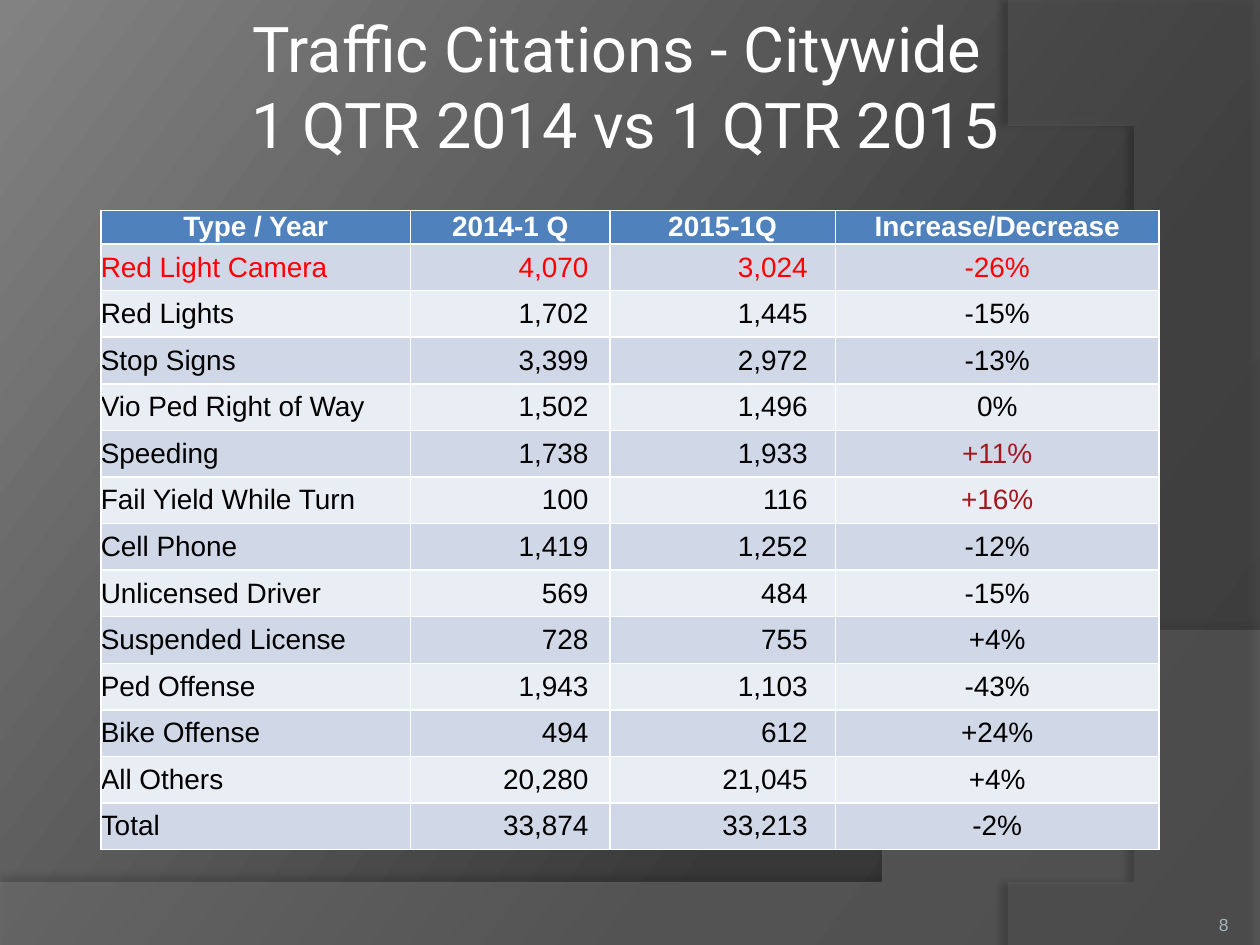
import copy
from dataclasses import dataclass

import pptx
import pptx.dml.color
import pptx.enum.text
import pptx.oxml
import pptx.oxml.ns
import pptx.util
from pptx.util import Inches, Pt

ALIGN = pptx.enum.text.PP_ALIGN
ANCHOR = pptx.enum.text.MSO_ANCHOR
qn = pptx.oxml.ns.qn
NAMESPACE = pptx.oxml.ns.nsdecls("a")

BLACK, WHITE, RED, DARK_RED = "000000", "FFFFFF", "FF0000", "A3171E"
HEADER_FILL, BAND_FILLS = "4F81BD", ("D0D8E8", "E9EDF4")
GRADIENT = ((0, "2F2F2F"), (0.3, "383838"), (1, "828282"))

Point = tuple[float, float]


@dataclass
class Swoosh:
    """Points and cubic curves; a curve is a tuple of two controls and an end."""
    start: Point
    segments: list[tuple[Point, ...]]
    fill: str
    opacity: int
    shadow_opacity: int
    shadow_distance: float
    shadow_direction: int


@dataclass
class Column:
    heading: str
    width: float
    alignment: ALIGN
    right_margin: float = 0


@dataclass
class Citation:
    kind: str
    count_2014: str
    count_2015: str
    change: str
    color: str = BLACK
    change_color: str = BLACK


SWOOSHES = [
    Swoosh((0, 7.05), [((0, 7.5),), ((10, 7.5),), ((10, 5.2),),
                       ((5.59, 7.29), (3.91, 7.19), (0, 7.05))],
           "7F7F7F", 45, 35, 3.5, 270),
    Swoosh((10, 0.02), [((10, 7.5),), ((8.21, 7.5),),
                        ((9.35, 6.19), (10.18, 3), (8, 0))],
           "5E5E5E", 40, 45, 4, 180),
]
COLUMNS = [
    Column("Type / Year", 2.46, ALIGN.LEFT),
    Column("2014-1 Q", 1.58, ALIGN.RIGHT, 0.17),
    Column("2015-1Q", 1.79, ALIGN.RIGHT, 0.22),
    Column("Increase/Decrease", 2.57, ALIGN.CENTER),
]
CITATIONS = [
    Citation("Red Light Camera", "4,070", "3,024", "-26%", RED, RED),
    Citation("Red Lights", "1,702", "1,445", "-15%"),
    Citation("Stop Signs", "3,399", "2,972", "-13%"),
    Citation("Vio Ped Right of Way", "1,502", "1,496", "0%"),
    Citation("Speeding", "1,738", "1,933", "+11%", change_color=DARK_RED),
    Citation("Fail Yield While Turn", "100", "116", "+16%", change_color=DARK_RED),
    Citation("Cell Phone", "1,419", "1,252", "-12%"),
    Citation("Unlicensed Driver", "569", "484", "-15%"),
    Citation("Suspended License", "728", "755", "+4%"),
    Citation("Ped Offense", "1,943", "1,103", "-43%"),
    Citation("Bike Offense", "494", "612", "+24%"),
    Citation("All Others", "20,280", "21,045", "+4%"),
    Citation("Total", "33,874", "33,213", "-2%"),
]


def rgb(color: str) -> pptx.dml.color.RGBColor:
    return pptx.dml.color.RGBColor.from_string(color)


def format_text(text_frame, size: float, color: str, alignment: ALIGN,
                font: str = "Arial", bold: bool = False) -> None:
    for paragraph in text_frame.paragraphs:
        paragraph.alignment = alignment
        for run in paragraph.runs:
            run.font.size = Pt(size)
            run.font.name = font
            run.font.bold = bold
            run.font.color.rgb = rgb(color)


def set_margins(target, margin: float) -> None:
    for side in ("left", "top", "right", "bottom"):
        setattr(target, f"margin_{side}", Inches(margin))


def paint_background(slide) -> None:
    fill = slide.background.fill
    fill.gradient()
    fill.gradient_angle = 143
    stop_list = next(slide.element.iter(qn("a:gsLst")))
    stop_list.append(copy.deepcopy(stop_list[-1]))
    for stop, (position, color) in zip(fill.gradient_stops, GRADIENT):
        stop.position = position
        stop.color.rgb = rgb(color)


def curve_points(start: Point, controls: tuple[Point, ...], steps: int = 40) -> list[Point]:
    """Sample a cubic curve, leaving out its start."""
    corners = (start, *controls)
    points = []
    for step in range(1, steps + 1):
        t = step / steps
        weights = ((1 - t) ** 3, 3 * t * (1 - t) ** 2, 3 * t * t * (1 - t), t ** 3)
        points.append(tuple(sum(w * corner[axis] for w, corner in zip(weights, corners))
                            for axis in (0, 1)))
    return points


def add_swoosh(slide, swoosh: Swoosh) -> None:
    points = [swoosh.start]
    for segment in swoosh.segments:
        points += curve_points(points[-1], segment) if len(segment) == 3 else segment
    builder = slide.shapes.build_freeform(*points[0], scale=Inches(1))
    builder.add_line_segments(points[1:], close=True)
    shape = builder.convert_to_shape()
    shape.fill.solid()
    shape.fill.fore_color.rgb = rgb(swoosh.fill)
    shape.line.fill.background()
    fill_color = next(shape.element.spPr.iter(qn("a:srgbClr")))
    fill_color.append(pptx.oxml.parse_xml(
        f'<a:alpha {NAMESPACE} val="{swoosh.opacity * 1000}"/>'))
    shape.element.spPr.append(pptx.oxml.parse_xml(
        f'<a:effectLst {NAMESPACE}><a:outerShdw blurRad="{Pt(4)}" '
        f'dist="{Pt(swoosh.shadow_distance)}" dir="{swoosh.shadow_direction * 60000}" '
        f'algn="ctr" rotWithShape="0"><a:srgbClr val="{BLACK}">'
        f'<a:alpha val="{swoosh.shadow_opacity * 1000}"/></a:srgbClr>'
        '</a:outerShdw></a:effectLst>'))


def add_title(slide) -> None:
    title = slide.shapes.title
    title.left, title.top, title.width, title.height = map(Inches, (0.42, 0, 9.08, 1.35))
    title.text_frame.text = "Traffic Citations - Citywide \v1 QTR 2014 vs 1 QTR 2015"
    title.text_frame.vertical_anchor = ANCHOR.MIDDLE
    set_margins(title.text_frame, 0.05)
    format_text(title.text_frame, 36, WHITE, ALIGN.CENTER, "Roboto")
    slide.shapes.element.append(title.element)  # in front of the swooshes


def add_slide_number(slide) -> None:
    text_frame = slide.shapes.add_textbox(*map(Inches, (8.92, 7.02, 0.83, 0.4))).text_frame
    text_frame.word_wrap = True
    text_frame.text = "8"
    text_frame.vertical_anchor = ANCHOR.BOTTOM
    set_margins(text_frame, 0)
    format_text(text_frame, 10, "A4B5B9", ALIGN.RIGHT)


def fill_cell(cell, text: str, fill: str, color: str, alignment: ALIGN,
              right_margin: float = 0, bold: bool = False) -> None:
    cell.text_frame.text = text
    cell.vertical_anchor = ANCHOR.MIDDLE
    set_margins(cell, 0)
    cell.margin_right = Inches(right_margin)
    format_text(cell.text_frame, 16, color, alignment, bold=bold)
    cell.fill.solid()
    cell.fill.fore_color.rgb = rgb(fill)
    properties = cell._tc.get_or_add_tcPr()
    for index, side in enumerate("LRTB"):
        properties.insert(index, pptx.oxml.parse_xml(
            f'<a:ln{side} {NAMESPACE} w="{Pt(1)}"><a:solidFill>'
            f'<a:srgbClr val="{WHITE}"/></a:solidFill></a:ln{side}>'))


def add_citation_table(slide) -> None:
    table = slide.shapes.add_table(len(CITATIONS) + 1, len(COLUMNS),
                                   *map(Inches, (0.8, 1.67, 8.4, 5.06))).table
    table.horz_banding = False
    for row in table.rows:
        row.height = Inches(0.37)
    table.rows[0].height = Inches(0.25)
    for index, column in enumerate(COLUMNS):
        table.columns[index].width = Inches(column.width)
        fill_cell(table.cell(0, index), column.heading, HEADER_FILL, WHITE,
                  ALIGN.CENTER, bold=True)
    for row_index, citation in enumerate(CITATIONS):
        texts = (citation.kind, citation.count_2014, citation.count_2015, citation.change)
        colors = (citation.color,) * 3 + (citation.change_color,)
        for index, (column, text, color) in enumerate(zip(COLUMNS, texts, colors)):
            fill_cell(table.cell(row_index + 1, index), text, BAND_FILLS[row_index % 2],
                      color, column.alignment, column.right_margin)


def main() -> None:
    presentation = pptx.Presentation()
    presentation.slide_width, presentation.slide_height = Inches(10), Inches(7.5)
    slide = presentation.slides.add_slide(presentation.slide_layouts.get_by_name("Title Only"))
    paint_background(slide)
    for swoosh in SWOOSHES:
        add_swoosh(slide, swoosh)
    add_title(slide)
    add_slide_number(slide)
    add_citation_table(slide)
    presentation.save("out.pptx")


if __name__ == "__main__":
    main()
